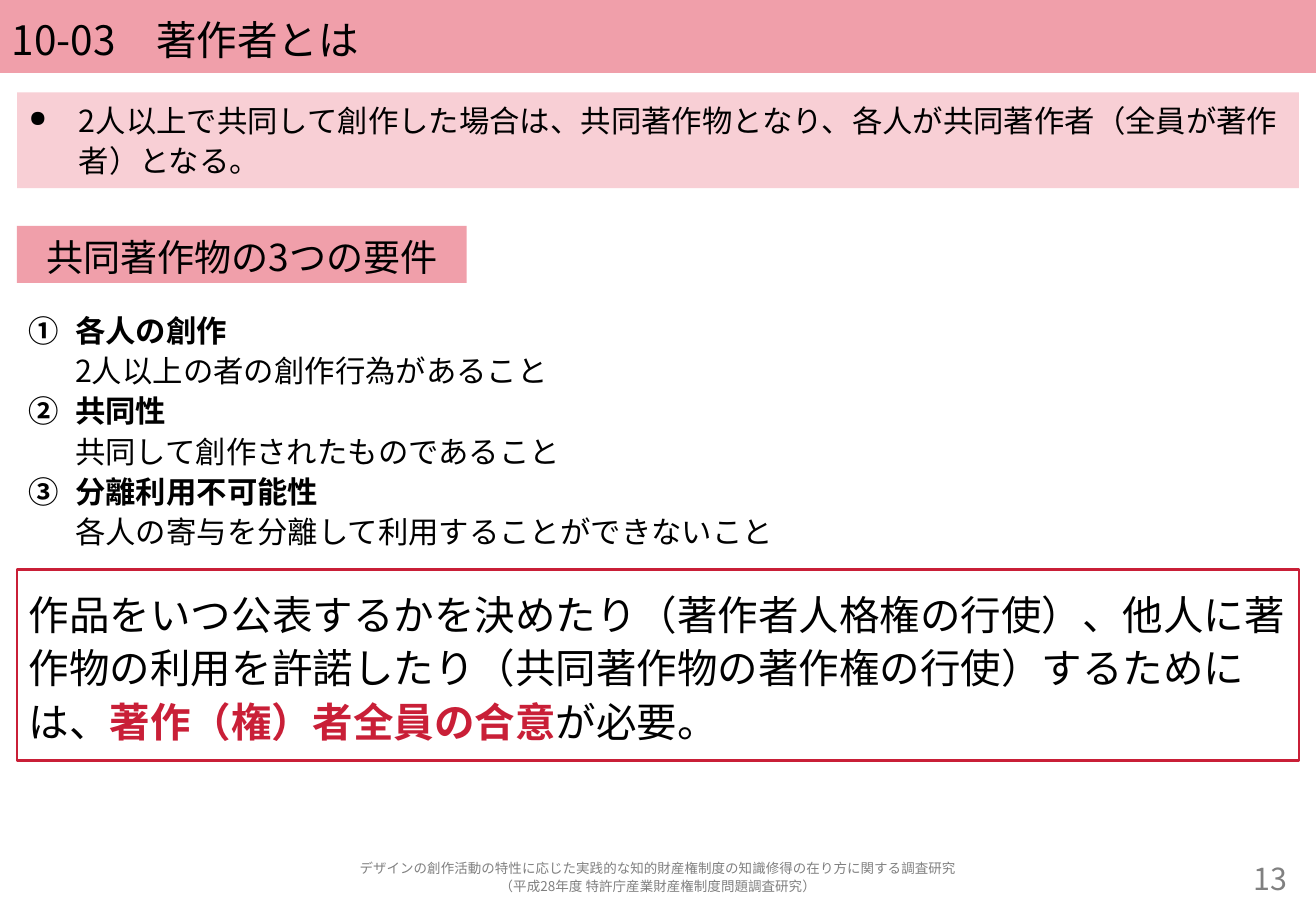
from lxml import etree
from pptx import Presentation
from pptx import util as u
from pptx.dml.color import RGBColor
from pptx.enum import shapes, text
from pptx.oxml import ns

FONT = "Noto Sans CJK JP"
LEADING = 1.32
COLORS = {
    "rose": "F09FAA",
    "pale": "F8CFD5",
    "red": "C91F37",
    "ink": "000000",
    "gray": "808080",
}
LEFT, WIDTH = 0.14, 10.55
MID = text.MSO_ANCHOR.MIDDLE
TOP = text.MSO_ANCHOR.TOP
CENTER = text.PP_ALIGN.CENTER
RIGHT = text.PP_ALIGN.RIGHT
TERMS = [
    ("各人の創作", "2人以上の者の創作行為があること"),
    ("共同性", "共同して創作されたものであること"),
    ("分離利用不可能性", "各人の寄与を分離して利用することができないこと"),
]


def color(name):
    return RGBColor.from_string(COLORS[name])


def style(run, size, tint="ink", bold=False):
    font = run.font
    font.size = u.Pt(size)
    font.bold = bold
    font.color.rgb = color(tint)
    font.name = FONT
    east = etree.SubElement(run._r.get_or_add_rPr(), ns.qn("a:ea"))
    east.set("typeface", FONT)


def write(shape, lines, size, tint="ink", align=None, anchor=MID):
    frame = shape.text_frame
    frame.word_wrap = True
    frame.vertical_anchor = anchor
    frame.text = "\n".join(lines)
    for para in frame.paragraphs:
        para.alignment = align or text.PP_ALIGN.LEFT
        para.line_spacing = u.Pt(round(size * LEADING, 1))
        para._p.get_or_add_pPr().set("hangingPunct", "0")
        for run in para.runs:
            style(run, size, tint)
    return frame


def add_box(slide, left, top, width, height, fill=None, line=None):
    box = slide.shapes.add_shape(
        shapes.MSO_SHAPE.RECTANGLE,
        u.Inches(left), u.Inches(top), u.Inches(width), u.Inches(height),
    )
    box.shadow.inherit = False
    if fill:
        box.fill.solid()
        box.fill.fore_color.rgb = color(fill)
    else:
        box.fill.background()
    if line:
        box.line.color.rgb = color(line)
        box.line.width = u.Pt(1.5)
    else:
        box.line.fill.background()
    return box


def add_label(slide, left, top, width, height):
    return slide.shapes.add_textbox(
        u.Inches(left), u.Inches(top), u.Inches(width), u.Inches(height)
    )


def mark(para, indent, tag, scale=100, **attrs):
    props = para._p.get_or_add_pPr()
    props.set("marL", str(u.Inches(indent)))
    props.set("indent", str(-u.Inches(indent)))
    etree.SubElement(props, ns.qn("a:buSzPct"), val=str(scale * 1000))
    etree.SubElement(props, ns.qn(tag), attrs)


def add_terms(slide):
    label = add_label(slide, LEFT, 2.49, WIDTH, 2.05)
    frame = write(label, ["\v".join(term) for term in TERMS], 18, anchor=TOP)
    for para in frame.paragraphs:
        para.runs[0].font.bold = True
        mark(para, 0.38, "a:buAutoNum", type="circleNumDbPlain")


def add_rule(slide):
    box = add_box(slide, LEFT, 4.69, WIDTH, 1.57, line="red")
    lead = (
        "作品をいつ公表するかを決めたり（著作者人格権の行使）、他人に著作物の"
        "利用を許諾したり（共同著作物の著作権の行使）するためには、"
    )
    para = write(box, [lead], 24).paragraphs[0]
    for words, tint, bold in [
        ("著作（権）者全員の合意", "red", True),
        ("が必要。", "ink", False),
    ]:
        run = para.add_run()
        run.text = words
        style(run, 24, tint, bold)


def main():
    deck = Presentation()
    deck.slide_width = u.Inches(10.83)
    deck.slide_height = u.Inches(7.5)
    slide = deck.slides.add_slide(deck.slide_layouts[6])

    write(add_box(slide, 0, 0, 10.83, 0.6, "rose"), ["10-03　著作者とは"], 24)
    intro = write(
        add_box(slide, LEFT, 0.76, WIDTH, 0.79, "pale"),
        ["2人以上で共同して創作した場合は、共同著作物となり、"
         "各人が共同著作者（全員が著作者）となる。"],
        18, anchor=TOP,
    )
    mark(intro.paragraphs[0], 0.41, "a:buChar", 75, char="●")
    write(add_label(slide, 9.35, 7.06, 1.34, 0.31), ["13"], 18, "gray", RIGHT)
    write(add_box(slide, LEFT, 1.86, 3.7, 0.47, "rose"),
          ["共同著作物の3つの要件"], 22, align=CENTER)
    add_terms(slide)
    add_rule(slide)
    write(
        add_label(slide, LEFT, 7.06, WIDTH, 0.31),
        ["デザインの創作活動の特性に応じた実践的な知的財産権制度の"
         "知識修得の在り方に関する調査研究",
         "（平成28年度 特許庁産業財産権制度問題調査研究）"],
        8, "gray", CENTER,
    )
    deck.save("out.pptx")


if __name__ == "__main__":
    main()
